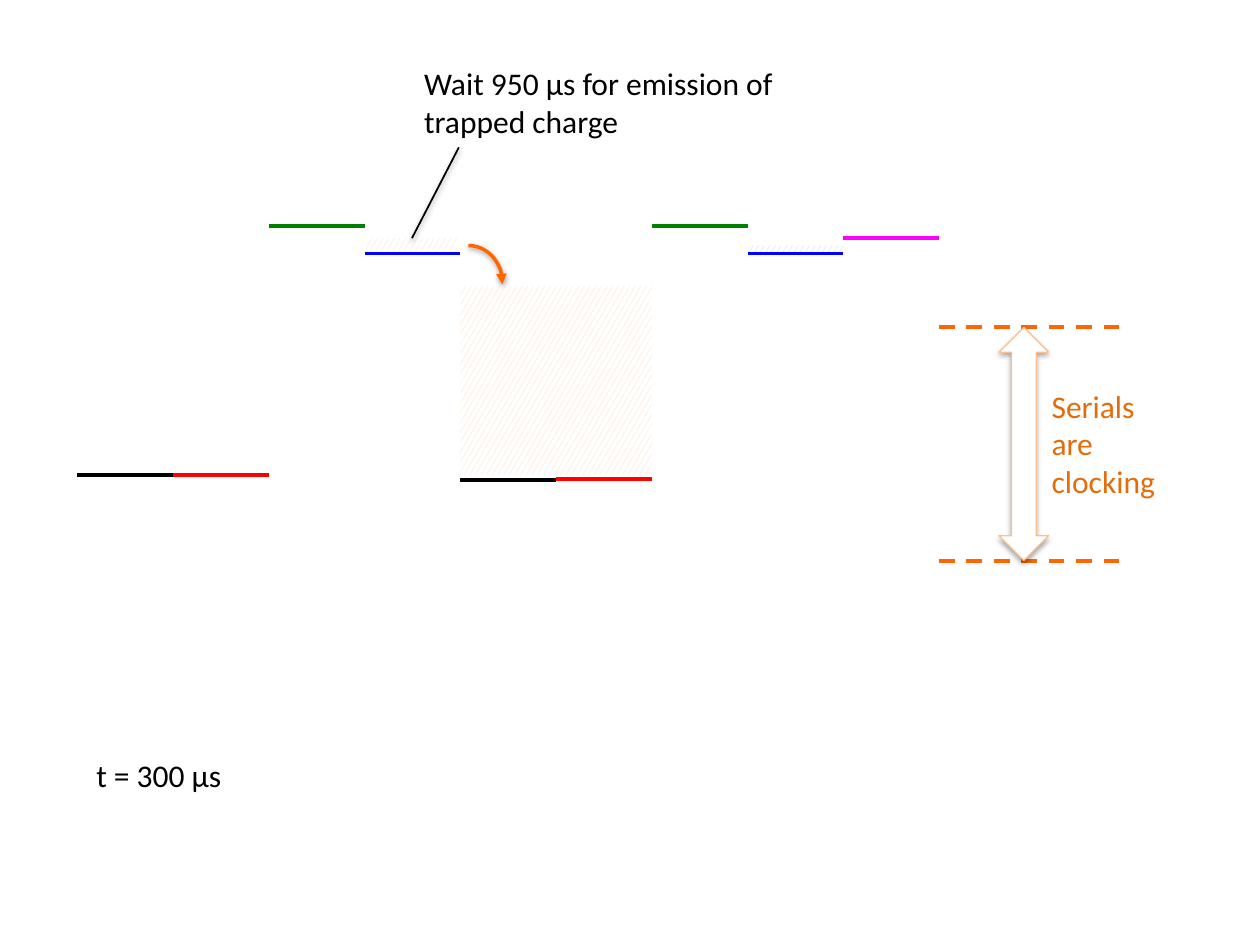
import dataclasses

import pptx
import pptx.dml.color
import pptx.enum.dml
import pptx.enum.shapes
import pptx.enum.text
import pptx.oxml
import pptx.oxml.ns
import pptx.util

Cm = pptx.util.Cm
SHAPE = pptx.enum.shapes.MSO_SHAPE


@dataclasses.dataclass(frozen=True)
class Theme:
    font: str = "Calibri"
    text_size: float = 18
    level_width: float = 2.25
    black: str = "000000"
    white: str = "FFFFFF"
    red: str = "FF0000"
    green: str = "008000"
    blue: str = "0000FF"
    magenta: str = "FF00FF"
    orange: str = "FF6600"
    pale_orange: str = "FAC090"
    serial_text: str = "E46C0A"
    charge: str = "FCD5B5"
    faint_charge: str = "CCC1DA"


@dataclasses.dataclass(frozen=True)
class Shadow:
    opacity: int
    distance: float


def rgb(color):
    return pptx.dml.color.RGBColor.from_string(color)


def set_effects(shape, shadow=None):
    """Replace the theme effects by none, or by one shadow falling straight down."""
    properties = shape._element.spPr
    namespace = pptx.oxml.ns.nsdecls("a")
    content = ""
    if shadow:
        content = (
            f'<a:outerShdw blurRad="{pptx.util.Pt(3.15)}" dist="{pptx.util.Pt(shadow.distance)}" '
            'dir="5400000" rotWithShape="0"><a:srgbClr val="000000">'
            f'<a:alpha val="{shadow.opacity * 1000}"/></a:srgbClr></a:outerShdw>'
        )
    properties.append(pptx.oxml.parse_xml(f"<a:effectLst {namespace}>{content}</a:effectLst>"))


class Diagram:
    """Holds the theme and the current page; all lengths are in centimetres."""

    def __init__(self, page, theme):
        self.shapes = page.shapes
        self.theme = theme

    def line(self, start, end, color, width, dashed=False, shadow=None, parent=None):
        shapes = parent.shapes if parent else self.shapes
        connector = shapes.add_connector(
            pptx.enum.shapes.MSO_CONNECTOR.STRAIGHT, *map(Cm, start + end)
        )
        self.outline(connector, color, width)
        if dashed:
            connector.line.dash_style = pptx.enum.dml.MSO_LINE.DASH
        set_effects(connector, shadow)
        return connector

    def level(self, left, height, length, color, dashed=False, parent=None):
        """Draw a horizontal potential level."""
        self.line((left, height), (left + length, height), color,
                  self.theme.level_width, dashed, parent=parent)

    def outline(self, shape, color, width):
        shape.line.color.rgb = rgb(color)
        shape.line.width = pptx.util.Pt(width)

    def charge(self, left, top, width, height, color):
        box = self.shapes.add_shape(SHAPE.RECTANGLE, *map(Cm, (left, top, width, height)))
        box.fill.patterned()
        box.fill.pattern = pptx.enum.dml.MSO_PATTERN.LARGE_CONFETTI
        box.fill.fore_color.rgb = rgb(color)
        box.fill.back_color.rgb = rgb(self.theme.white)
        box.line.fill.background()
        set_effects(box)
        return box

    def double_arrow(self, left, top, width, height):
        arrow = self.shapes.add_shape(SHAPE.UP_DOWN_ARROW, *map(Cm, (left, top, width, height)))
        arrow.fill.solid()
        arrow.fill.fore_color.rgb = rgb(self.theme.white)
        self.outline(arrow, self.theme.pale_orange, 0.75)
        set_effects(arrow, Shadow(35, 1.8))

    def curved_arrow(self, left, top, width, height, shadow):
        arc = self.shapes.add_shape(SHAPE.ARC, *map(Cm, (left, top, width, height)))
        arc.adjustments[0] = 162
        arc.adjustments[1] = 1.65
        arc.fill.background()
        self.outline(arc, self.theme.orange, 2)
        namespace = pptx.oxml.ns.nsdecls("a")
        arc.line._get_or_add_ln().append(
            pptx.oxml.parse_xml(f'<a:tailEnd {namespace} type="triangle"/>')
        )
        set_effects(arc, shadow)

    def text(self, left, top, width, height, words, color):
        box = self.shapes.add_textbox(*map(Cm, (left, top, width, height)))
        frame = box.text_frame
        frame.word_wrap = True
        frame.auto_size = pptx.enum.text.MSO_AUTO_SIZE.SHAPE_TO_FIT_TEXT
        para = frame.paragraphs[0]
        para.text = words
        para.font.name = self.theme.font
        para.font.size = pptx.util.Pt(self.theme.text_size)
        para.font.color.rgb = rgb(color)


def main():
    deck = pptx.Presentation()
    deck.slide_width, deck.slide_height = Cm(25.4), Cm(19.05)
    theme = Theme()
    diagram = Diagram(deck.slides.add_slide(deck.slide_layouts[6]), theme)
    soft_shadow = Shadow(38, 1.6)

    step = 1.93
    columns = [1.56 + step * index for index in range(10)]
    phases_per_pixel = 4
    phases = [
        (theme.black, (9.58, 9.68)),
        (theme.red, (9.58, 9.65)),
        (theme.green, (4.55, 4.55)),
        (theme.blue, (5.11, 5.11)),
    ]
    for phase, (color, heights) in enumerate(phases):
        group = diagram.shapes.add_group_shape()
        for pixel, height in enumerate(heights):
            left = columns[phase + pixel * phases_per_pixel]
            diagram.level(left, height, step, color, parent=group)

    diagram.charge(columns[4], 5.77, 2 * step, 3.81, theme.charge)

    serial_high, serial_low = 6.6, 11.3
    for height in (serial_low, serial_high):
        diagram.level(columns[9], height, 2 * step, theme.orange, dashed=True)
    diagram.double_arrow(20.14, serial_high, 1, serial_low - serial_high)
    diagram.text(20.95, 7.67, 3.12, 2.57, "Serials are clocking", theme.serial_text)

    trapped = diagram.charge(7.39, 4.8, 1.83, 0.25, theme.charge)
    diagram.curved_arrow(8.76, 4.95, 1.37, 1.5, soft_shadow)
    diagram.text(8.3, 1.17, 8.69, 1.8, "Wait 950 µs for emission of trapped charge", theme.black)
    leader = diagram.line((9.25, 2.97), (8.3, 4.8), theme.black, 1, shadow=soft_shadow)
    leader.end_connect(trapped, 0)

    diagram.level(columns[8], 4.8, step, theme.magenta)
    diagram.text(1.55, 15.11, 12.7, 1.02, " t = 300 µs", theme.black)
    diagram.charge(columns[7], 4.95, step, 0.13, theme.faint_charge)

    deck.save("out.pptx")


if __name__ == "__main__":
    main()
